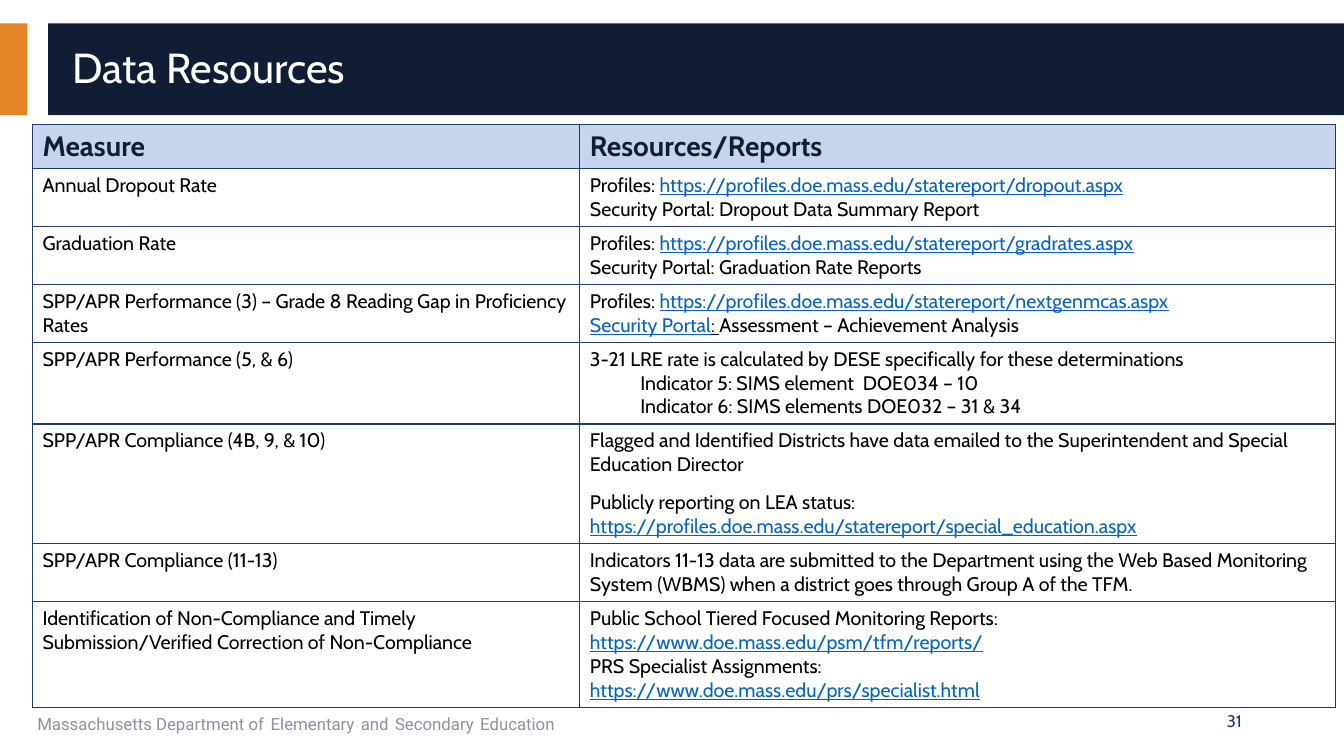
"""Build the Data Resources slide: title band, resource table and footer."""
from collections import namedtuple

from lxml.etree import SubElement
from pptx import Presentation
from pptx.dml.color import RGBColor
from pptx.enum.shapes import MSO_SHAPE as Shape
from pptx.enum.text import MSO_ANCHOR as Anchor, MSO_AUTO_SIZE as AutoSize, PP_ALIGN as Align
from pptx.oxml.ns import qn
from pptx.util import Pt

NAVY, ORANGE, BLUE, PALE = "101D35", "E38526", "203B6A", "C6D4EE"
BLACK, WHITE, GREY, LINK = "000000", "FFFFFF", "8D92A1", "0563C1"
Line = namedtuple("Line", "runs indent before", defaults=(0, 0))
REPORTS = "https://profiles.doe.mass.edu/statereport/"


def rgb(value):
    return RGBColor.from_string(value)


def add_border(cell, side, width):
    border = SubElement(cell._tc.get_or_add_tcPr(), qn(f"a:{side}"), w=str(Pt(width)))
    SubElement(SubElement(border, qn("a:solidFill")), qn("a:srgbClr"), val=BLUE)


prs = Presentation()
prs.slide_width, prs.slide_height = Pt(960), Pt(540)
slide = prs.slides.add_slide(prs.slide_layouts[5])

for left, width, color in [(0, 19.6, ORANGE), (34.4, 925.6, NAVY)]:
    band = slide.shapes.add_shape(Shape.RECTANGLE, Pt(left), Pt(16.7), Pt(width), Pt(65.5))
    band.shadow.inherit = False
    band.fill.solid()
    band.fill.fore_color.rgb = rgb(color)
    band.line.fill.background()

title = slide.shapes.title
title.element.getparent().append(title.element)
title.left, title.top, title.width, title.height = Pt(44.6), Pt(23), Pt(895.7), Pt(53.3)
title.text_frame.text = "Data Resources"
title.text_frame.auto_size = AutoSize.NONE
title.text_frame.vertical_anchor = Anchor.MIDDLE
heading = title.text_frame.paragraphs[0]
heading.alignment = Align.LEFT
heading.line_spacing = 0.9
heading.font.name, heading.font.size = "Cabin", Pt(30)
heading.font.color.rgb = rgb(WHITE)

# Underlined runs are (text, colour) pairs; plain runs are strings.
resources = [
    (31.4, "Measure", [Line(["Resources/Reports"])]),
    (41.4, "Annual Dropout Rate", [
        Line(["Profiles: ", (REPORTS + "dropout.aspx", LINK)]),
        Line(["Security Portal: Dropout Data Summary Report"])]),
    (41.4, "Graduation Rate", [
        Line(["Profiles: ", (REPORTS + "gradrates.aspx", LINK)]),
        Line(["Security Portal: Graduation Rate Reports"])]),
    (41.4, "SPP/APR Performance (3) – Grade 8 Reading Gap in Proficiency Rates", [
        Line(["Profiles: ", (REPORTS + "nextgenmcas.aspx", LINK)]),
        Line([("Security Portal", LINK), (": ", BLACK), "Assessment – Achievement Analysis"])]),
    (57.9, "SPP/APR Performance (5, & 6)", [
        Line(["3-21 LRE rate is calculated by DESE specifically for these determinations"]),
        Line(["Indicator 5: SIMS element  DOE034 – 10"], indent=36),
        Line(["Indicator 6: SIMS elements DOE032 – 31 & 34"], indent=36)]),
    (85.7, "SPP/APR Compliance (4B, 9, & 10)", [
        Line(["Flagged and Identified Districts have data emailed to the Superintendent "
              "and Special Education Director"]),
        Line(["Publicly reporting on LEA status: ",
              (REPORTS + "special_education.aspx", LINK)], before=10)]),
    (41.4, "SPP/APR Compliance (11-13)", [
        Line(["Indicators 11-13 data are submitted to the Department using the Web Based "
              "Monitoring System (WBMS) when a district goes through Group A of the TFM."])]),
    (75.7, "Identification of Non-Compliance and Timely "
           "Submission/Verified Correction of Non-Compliance", [
        Line(["Public School Tiered Focused Monitoring Reports:"]),
        Line([("https://www.doe.mass.edu/psm/tfm/reports/", LINK)]),
        Line(["PRS Specialist Assignments:"]),
        Line([("https://www.doe.mass.edu/prs/specialist.html", LINK)])]),
]
last_row = len(resources) - 1
table = slide.shapes.add_table(len(resources), 2, Pt(23.2), Pt(88.7), Pt(930.7), Pt(416.3)).table
table.horz_banding = False
table.columns[0].width, table.columns[1].width = Pt(391), Pt(539.7)

for row, (height, measure, reports) in enumerate(resources):
    table.rows[row].height = Pt(height)
    for col, lines in enumerate([[Line([measure])], reports]):
        cell = table.cell(row, col)
        outer_edges = {"lnL": col == 0, "lnR": col == 1, "lnT": row == 0, "lnB": row == last_row}
        for side, outer in outer_edges.items():
            add_border(cell, side, 0.5 if outer else 1)
        if row == 0:
            cell.fill.solid()
            cell.fill.fore_color.rgb = rgb(PALE)
        else:
            cell.fill.background()
        for index, line in enumerate(lines):
            frame = cell.text_frame
            paragraph = frame.add_paragraph() if index else frame.paragraphs[0]
            paragraph.font.name = "Cabin"
            paragraph.font.size = Pt(14 if row else 20)
            paragraph.font.bold = row == 0
            if line.before:
                paragraph.space_before = Pt(line.before)
            if line.indent:
                paragraph._p.get_or_add_pPr().set("marL", str(Pt(line.indent)))
            for part in line.runs:
                underlined = isinstance(part, tuple)
                text, color = part if underlined else (part, BLACK if row else NAVY)
                run = paragraph.add_run()
                run.text = text
                run.font.underline = underlined
                run.font.color.rgb = rgb(color)

footer = slide.shapes.add_textbox(Pt(19.6), Pt(500.4), Pt(607.7), Pt(29)).text_frame
footer.word_wrap = True
department = footer.paragraphs[0]
department.font.name = "Roboto"
for index, words in enumerate(["Massachusetts Department of", "Elementary", "and", "Secondary",
                               "Education"]):
    pieces = [(" ", 18, BLUE)] if index else []
    for text, size, color in pieces + [(words, 12, GREY)]:
        run = department.add_run()
        run.text = text
        run.font.size = Pt(size)
        run.font.color.rgb = rgb(color)

page = slide.shapes.add_textbox(Pt(678.2), Pt(500.4), Pt(216), Pt(28.8)).text_frame
page.word_wrap = True
page.vertical_anchor = Anchor.MIDDLE
page.text = "31"
number = page.paragraphs[0]
number.alignment = Align.RIGHT
number.font.name, number.font.size = "Cabin", Pt(12)
number.font.color.rgb = rgb(BLUE)

prs.save("out.pptx")
